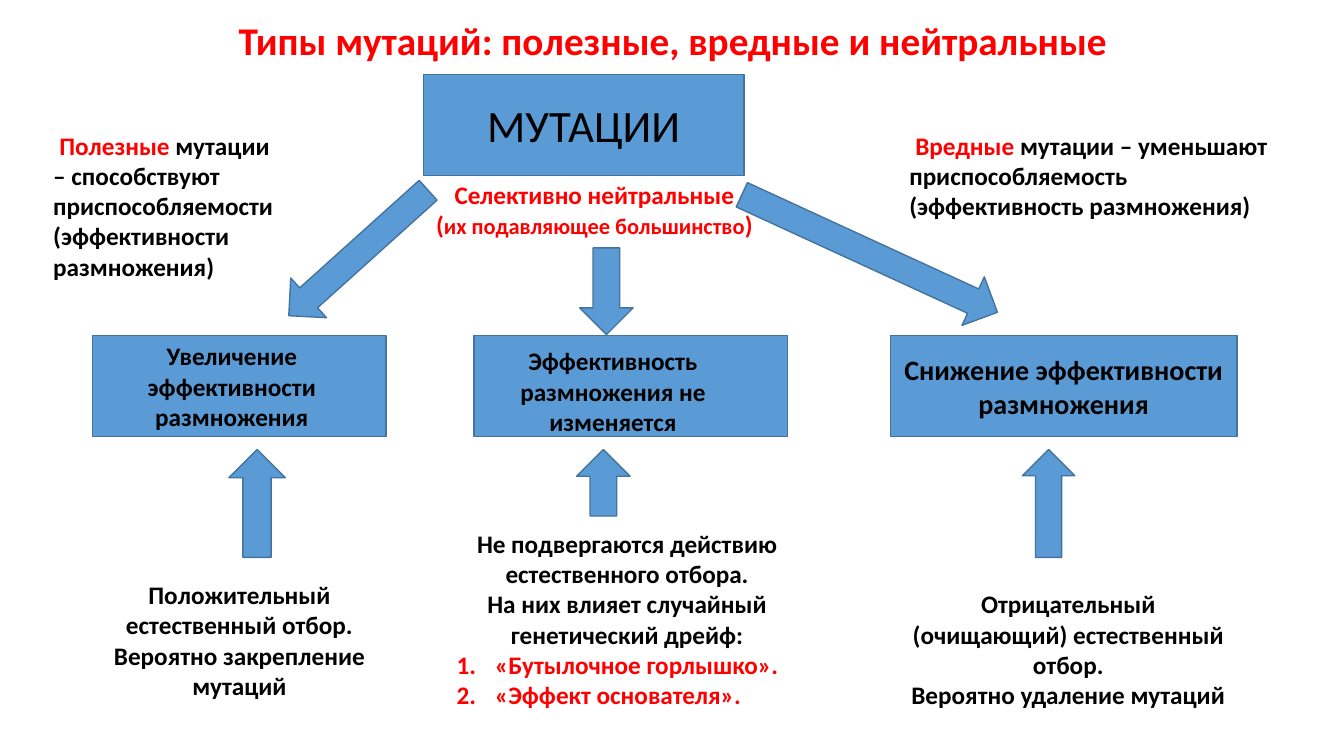
from dataclasses import dataclass

from lxml.etree import SubElement
from pptx import Presentation
from pptx.dml.color import RGBColor
from pptx.enum.shapes import MSO_SHAPE
from pptx.enum.text import MSO_ANCHOR, MSO_AUTO_SIZE, PP_ALIGN
from pptx.oxml.ns import qn
from pptx.util import Pt

PX = 9144


@dataclass(frozen=True)
class Theme:
    """Colours, font and type sizes of the slide."""
    font: str = "Calibri"
    black: str = "000000"
    red: str = "FF0000"
    fill: str = "5B9BD5"
    line: str = "43739E"
    title: int = 28
    head: int = 32
    strong: int = 20
    body: int = 18
    small: int = 16


class SlideBuilder:
    """Draws the elements of one slide in one style."""

    def __init__(self, deck, theme):
        self.theme = theme
        self.page = deck.slides.add_slide(deck.slide_layouts[6])

    def span(self, para, text, color=None, size=None, bold=True):
        """Add one run to a paragraph."""
        span = para.add_run()
        span.text = text
        font = span.font
        font.name = self.theme.font
        font.size = Pt(size or self.theme.body)
        font.bold = bold
        font.color.rgb = RGBColor.from_string(color or self.theme.black)

    def para(self, frame, spans, align=PP_ALIGN.CENTER, indent=0, numbered=False):
        """Fill the empty first paragraph or add a new one."""
        first = frame.paragraphs[0]
        para = frame.add_paragraph() if first.runs else first
        para.alignment = align
        properties = para._p.get_or_add_pPr()
        if indent:
            properties.set("marL", str(max(0, -indent) * PX))
            properties.set("indent", str(indent * PX))
        if numbered:
            SubElement(properties, qn("a:buFont"), typeface="+mj-lt")
            SubElement(properties, qn("a:buAutoNum"), type="arabicPeriod")
        for span in spans:
            self.span(para, *span)
        return para

    def text(self, left, top, width, height, grow=True):
        """Add a wrapping text box and return its frame."""
        box = self.page.shapes.add_textbox(left * PX, top * PX, width * PX, height * PX)
        frame = box.text_frame
        frame.word_wrap = True
        frame.auto_size = MSO_AUTO_SIZE.SHAPE_TO_FIT_TEXT if grow else MSO_AUTO_SIZE.NONE
        return frame

    def shape(self, kind, left, top, width, height, rotation=0):
        """Add a blue outlined shape."""
        shape = self.page.shapes.add_shape(kind, left * PX, top * PX, width * PX, height * PX)
        shape.shadow.inherit = False
        shape.rotation = rotation
        shape.fill.solid()
        shape.fill.fore_color.rgb = RGBColor.from_string(self.theme.fill)
        shape.line.color.rgb = RGBColor.from_string(self.theme.line)
        shape.line.width = Pt(1)
        return shape

    def block(self, left, top, width, height, *spans):
        """Add a rectangle with an optional centred caption."""
        shape = self.shape(MSO_SHAPE.RECTANGLE, left, top, width, height)
        frame = shape.text_frame
        frame.word_wrap = True
        frame.vertical_anchor = MSO_ANCHOR.MIDDLE
        if spans:
            self.para(frame, spans)


def main():
    """Build and save the slide."""
    deck = Presentation()
    deck.slide_width, deck.slide_height = 1333 * PX, 750 * PX
    theme = Theme()
    slide = SlideBuilder(deck, theme)

    title = slide.text(92, 0, 1150, 84, grow=False)
    title.vertical_anchor = MSO_ANCHOR.MIDDLE
    heading = "Типы мутаций: полезные, вредные и нейтральные"
    slide.para(title, [(heading, theme.red, theme.title)]).line_spacing = 0.9

    slide.block(420, 74, 318, 100, ("МУТАЦИИ", theme.black, theme.head, False))
    slide.block(92, 333, 291, 100)
    slide.block(470, 333, 311, 100)
    slide.block(883, 333, 344, 100,
                ("Снижение эффективности размножения", theme.black, theme.strong))

    for left, top, height, rotation in [(575, 246, 86, 0), (329, 158, 186, 48),
                                        (836, 112, 279, 294.7)]:
        slide.shape(MSO_SHAPE.DOWN_ARROW, left, top, 53, height, rotation)
    for left, width, height in [(227, 56, 107), (572, 53, 66), (1014, 52, 107)]:
        slide.shape(MSO_SHAPE.UP_ARROW, left, 446, width, height)

    centred = [
        ((92, 333, 276, 101), ["Увеличение эффективности размножения"]),
        ((470, 338, 276, 101), ["Эффективность размножения не изменяется"]),
        ((92, 570, 291, 131),
         ["Положительный естественный отбор.", "Вероятно закрепление мутаций"]),
        ((892, 579, 335, 131),
         ["Отрицательный (очищающий) естественный отбор.", "Вероятно удаление мутаций"]),
    ]
    for place, lines in centred:
        frame = slide.text(*place)
        for line in lines:
            slide.para(frame, [(line,)])

    drift = slide.text(443, 519, 358, 192)
    for line in ["Не подвергаются действию естественного отбора.",
                 "На них влияет случайный генетический дрейф:"]:
        slide.para(drift, [(line,)])
    for line in ["«Бутылочное горлышко».", "«Эффект основателя»."]:
        slide.para(drift, [(line, theme.red)], PP_ALIGN.LEFT, -38, True)

    definitions = [
        ((43, 124, 243, 162), "Полезные",
         " мутации – способствуют приспособляемости (эффективности размножения)"),
        ((892, 124, 385, 101), "Вредные",
         " мутации – уменьшают приспособляемость (эффективность размножения)"),
    ]
    for place, term, meaning in definitions:
        slide.para(slide.text(*place), [(term, theme.red), (meaning,)], PP_ALIGN.LEFT, 6)

    neutral = slide.text(420, 173, 339, 101)
    slide.para(neutral, [("Селективно нейтральные", theme.red)])
    slide.para(neutral, [("(", theme.red),
                         ("их подавляющее большинство", theme.red, theme.small),
                         (")", theme.red)])

    deck.save("out.pptx")


if __name__ == "__main__":
    main()
